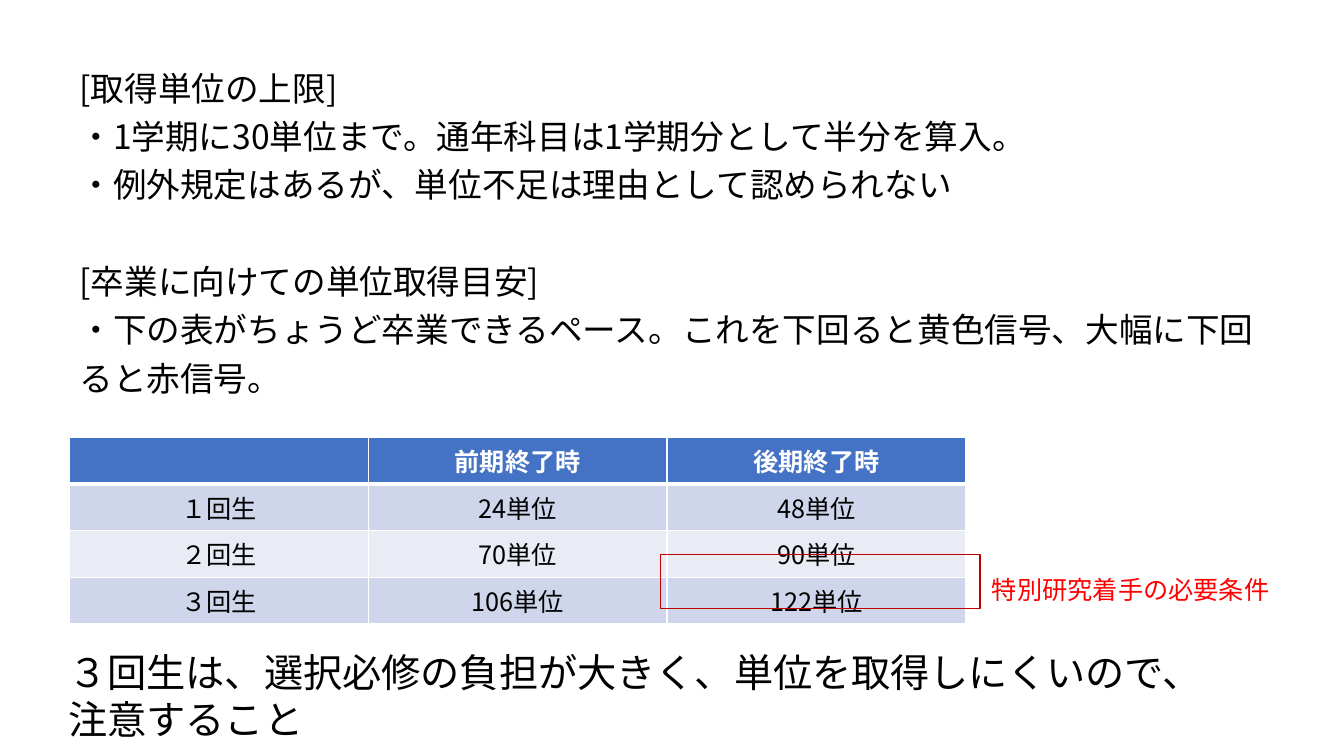
from dataclasses import dataclass

from lxml.etree import SubElement
from pptx import Presentation
from pptx.dml.color import RGBColor
from pptx.enum.shapes import MSO_SHAPE
from pptx.enum.text import MSO_AUTO_SIZE, PP_ALIGN
from pptx.oxml.ns import qn
from pptx.util import Inches, Pt


@dataclass(frozen=True)
class Theme:
    """Fonts, type sizes and colours of the deck."""
    font: str = "Noto Sans CJK JP"
    label: int = 18
    body: int = 24
    closing: int = 28
    ink: str = "000000"
    paper: str = "FFFFFF"
    header: str = "4472C4"
    bands: tuple = ("CFD5EA", "E9EBF5")
    frame: str = "C00000"
    alert: str = "FF0000"


def write(para, text, *, theme, size, color, bold=False, align=None, spacing=None, before=0):
    """Add one formatted span of text to a paragraph."""
    span = para.add_run()
    span.text = text
    span.font.name = theme.font
    span.font.size = Pt(size)
    span.font.bold = bold
    span.font.color.rgb = RGBColor.from_string(color)
    properties = span.font._element
    properties.set("lang", "ja-JP")
    SubElement(properties, qn("a:ea"), typeface=theme.font)
    para.alignment = align
    para.line_spacing = spacing
    para.space_before = Pt(before)


class Slide:
    """A page whose lengths are given in columns and rows of one inch."""

    def __init__(self, deck, theme):
        """Add a blank page to the deck."""
        self.theme = theme
        self.page = deck.slides.add_slide(deck.slide_layouts[6])

    def text(self, area, paragraphs, *, wrap=True, grow=False, **style):
        """Place a text box of (text, space before) paragraphs."""
        box = self.page.shapes.add_textbox(*map(Inches, area))
        frame = box.text_frame
        frame.word_wrap = wrap
        frame.auto_size = MSO_AUTO_SIZE.SHAPE_TO_FIT_TEXT if grow else MSO_AUTO_SIZE.NONE
        for index, (text, before) in enumerate(paragraphs):
            para = frame.add_paragraph() if index else frame.paragraphs[0]
            write(para, text, theme=self.theme, before=before, **style)

    def frame(self, area):
        """Outline an area without filling it."""
        box = self.page.shapes.add_shape(MSO_SHAPE.RECTANGLE, *map(Inches, area))
        box.shadow.inherit = False
        box.fill.background()
        box.line.color.rgb = RGBColor.from_string(self.theme.frame)
        box.line.width = Pt(1)

    def border(self, cell, side, width):
        """Draw one side of a table cell."""
        line = SubElement(cell._tc.get_or_add_tcPr(), qn(f"a:{side}"), w=str(Pt(width)))
        fill = SubElement(line, qn("a:solidFill"))
        SubElement(fill, qn("a:srgbClr"), val=self.theme.paper)

    def table(self, area, records):
        """Place a centred table with a header and banded rows."""
        theme = self.theme
        shape = self.page.shapes.add_table(len(records), len(records[0]), *map(Inches, area))
        for row, record in enumerate(records):
            heading = row == 0
            fill = theme.header if heading else theme.bands[(row - 1) % 2]
            for column, text in enumerate(record):
                cell = shape.table.cell(row, column)
                for side in ("lnL", "lnR", "lnT", "lnB"):
                    thick = (heading and side == "lnB") or (row == 1 and side == "lnT")
                    self.border(cell, side, 3 if thick else 1)
                cell.fill.solid()
                cell.fill.fore_color.rgb = RGBColor.from_string(fill)
                if text:
                    write(cell.text_frame.paragraphs[0], text, theme=theme, size=theme.label,
                          color=theme.paper if heading else theme.ink,
                          bold=heading, align=PP_ALIGN.CENTER)


def main():
    """Build the page on credit limits and save the deck."""
    theme = Theme()
    deck = Presentation()
    deck.slide_width, deck.slide_height = Inches(13.33), Inches(7.5)
    slide = Slide(deck, theme)
    slide.text((0.69, 0.54, 12.02, 3.49), [
        ("[取得単位の上限]", 0),
        ("・1学期に30単位まで。通年科目は1学期分として半分を算入。", 0),
        ("・例外規定はあるが、単位不足は理由として認められない", 0),
        ("[卒業に向けての単位取得目安]", 34.5),
        ("・下の表がちょうど卒業できるペース。これを下回ると黄色信号、大幅に下回ると赤信号。", 0),
    ], size=theme.body, color=theme.ink, spacing=1.2)
    slide.table((0.69, 4.34, 8.89, 1.62), [
        ("", "前期終了時", "後期終了時"),
        ("１回生", "24単位", "48単位"),
        ("２回生", "70単位", "90単位"),
        ("３回生", "106単位", "122単位"),
    ])
    slide.frame((6.55, 5.5, 3.17, 0.54))
    slide.text((9.74, 5.65, 2.98, 0.4), [("特別研究着手の必要条件", 0)],
               wrap=False, grow=True, size=theme.label, color=theme.alert)
    slide.text((0.58, 6.38, 11.42, 1.04),
               [("３回生は、選択必修の負担が大きく、単位を取得しにくいので、注意すること", 0)],
               grow=True, size=theme.closing, color=theme.ink)


    deck.save("out.pptx")


if __name__ == "__main__":
    main()
